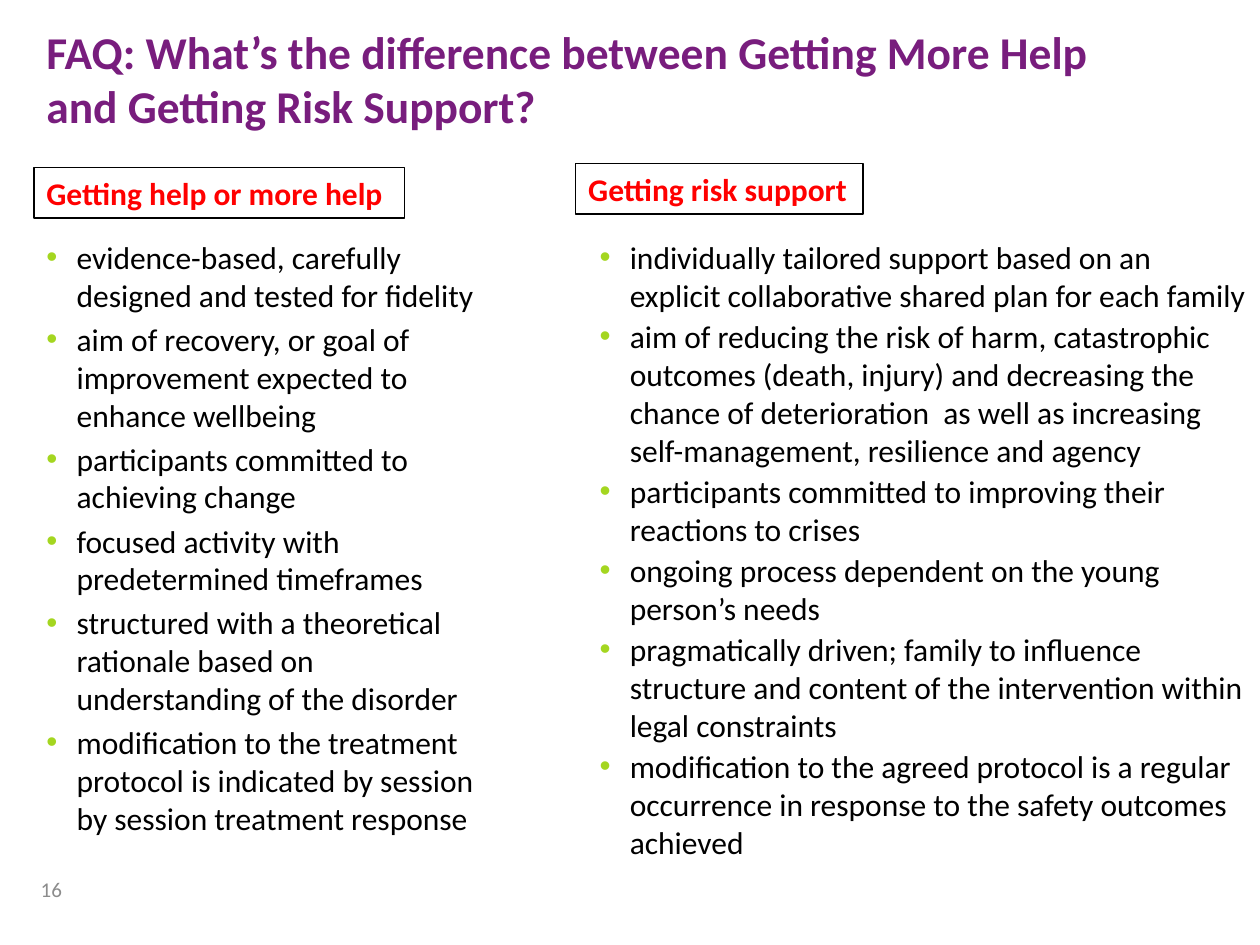
from dataclasses import dataclass
from typing import NamedTuple

from lxml.etree import SubElement
from pptx import Presentation
from pptx.dml.color import RGBColor
from pptx.enum.shapes import MSO_SHAPE
from pptx.enum.text import MSO_ANCHOR, PP_ALIGN
from pptx.oxml.ns import qn
from pptx.util import Inches, Pt

SLIDE_WIDTH, SLIDE_HEIGHT = Inches(10), Inches(7.5)
COLUMN, ROW = SLIDE_WIDTH / 100, SLIDE_HEIGHT / 75
BULLET_COLOUR = "A4D620"
BULLET_MARGIN, BULLET_HANG = 3.8 * COLUMN, 2.4 * COLUMN


class Area(NamedTuple):
    left: float
    top: float
    width: float
    height: float

    def lengths(self) -> list[int]:
        units = (COLUMN, ROW, COLUMN, ROW)
        return [round(share * unit) for share, unit in zip(self, units)]


@dataclass(frozen=True)
class Approach:
    heading: str
    heading_area: Area
    points: list[str]
    points_area: Area
    point_gap: float


TITLE = "FAQ: What’s the difference between Getting More Help and Getting Risk Support?"

APPROACHES = [
    Approach(
        "Getting help or more help",
        Area(2.7, 13.3, 29.4, 4),
        [
            "evidence-based, carefully designed and tested for fidelity",
            "aim of recovery, or goal of improvement expected to enhance wellbeing",
            "participants committed to achieving change",
            "focused activity with predetermined timeframes",
            "structured with a theoretical rationale based on  understanding of the disorder",
            "modification to the treatment protocol is indicated by session by session "
            "treatment response",
        ],
        Area(1.3, 18.4, 39.9, 48.9),
        3.6,
    ),
    Approach(
        "Getting risk support",
        Area(45.7, 13, 22.8, 4),
        [
            "individually tailored support based on an explicit collaborative shared plan "
            "for each family",
            "aim of reducing the risk of harm, catastrophic outcomes (death, injury) and "
            "decreasing the chance of deterioration  as well as increasing "
            "self-management, resilience and agency",
            "participants committed to improving their reactions to crises",
            "ongoing process dependent on the young person’s needs",
            "pragmatically driven; family to influence structure and content of the "
            "intervention within legal constraints",
            "modification to the agreed protocol is a regular occurrence in response to "
            "the safety outcomes achieved",
        ],
        Area(45.2, 18.4, 54.8, 52),
        2,
    ),
]

TITLE_FORMAT = {"size": Pt(26), "bold": True}
HEADING_FORMAT = {"size": Pt(18), "bold": True}
POINT_FORMAT = {"size": Pt(18)}
NUMBER_FORMAT = {"size": Pt(12)}


def colour(code: str) -> RGBColor:
    return RGBColor.from_string(code)


def apply(target, values: dict) -> None:
    for attribute, value in values.items():
        setattr(target, attribute, value)


def write(frame, lines: list[str], ink: str, font: dict, layout: dict) -> None:
    frame.word_wrap = True
    for index, line in enumerate(lines):
        paragraph = frame.add_paragraph() if index else frame.paragraphs[0]
        apply(paragraph, layout)
        run = paragraph.add_run()
        run.text = line
        apply(run.font, {"name": "Calibri"} | font)
        run.font.color.rgb = colour(ink)


def add_text(slide, area: Area, lines: list[str], ink: str, font: dict, layout: dict):
    frame = slide.shapes.add_textbox(*area.lengths()).text_frame
    write(frame, lines, ink, font, layout)
    return frame


def add_bullet(paragraph) -> None:
    properties = paragraph._p.get_or_add_pPr()
    properties.set("marL", str(round(BULLET_MARGIN)))
    properties.set("indent", str(-round(BULLET_HANG)))
    bullet_fill = SubElement(properties, qn("a:buClr"))
    SubElement(bullet_fill, qn("a:srgbClr"), val=BULLET_COLOUR)
    SubElement(properties, qn("a:buFont"), typeface="Arial")
    SubElement(properties, qn("a:buChar"), char="•")


def add_heading(slide, approach: Approach) -> None:
    frame_box = slide.shapes.add_shape(
        MSO_SHAPE.RECTANGLE, *approach.heading_area.lengths()
    )
    frame_box.shadow.inherit = False
    frame_box.fill.background()
    frame_box.line.color.rgb = colour("000000")
    frame_box.line.width = Pt(0.75)
    frame_box.text_frame.vertical_anchor = MSO_ANCHOR.TOP
    write(
        frame_box.text_frame,
        [approach.heading],
        "FF0000",
        HEADING_FORMAT,
        {"alignment": PP_ALIGN.LEFT},
    )


def add_points(slide, approach: Approach) -> None:
    spacing = {"space_before": Pt(approach.point_gap)}
    frame = add_text(
        slide, approach.points_area, approach.points, "000000", POINT_FORMAT, spacing
    )
    for paragraph in frame.paragraphs:
        add_bullet(paragraph)


def main() -> None:
    presentation = Presentation()
    apply(presentation, {"slide_width": SLIDE_WIDTH, "slide_height": SLIDE_HEIGHT})
    slide = presentation.slides.add_slide(presentation.slide_layouts[6])

    number = add_text(
        slide,
        Area(1.2, 68.6, 4.7, 4),
        ["16"],
        "8C8C8C",
        NUMBER_FORMAT,
        {"alignment": PP_ALIGN.RIGHT},
    )
    number.vertical_anchor = MSO_ANCHOR.MIDDLE
    add_text(slide, Area(2.7, 1.4, 88.5, 11.4), [TITLE], "781D7D", TITLE_FORMAT, {})
    for approach in APPROACHES:
        add_heading(slide, approach)
        add_points(slide, approach)

    presentation.save("out.pptx")


if __name__ == "__main__":
    main()
